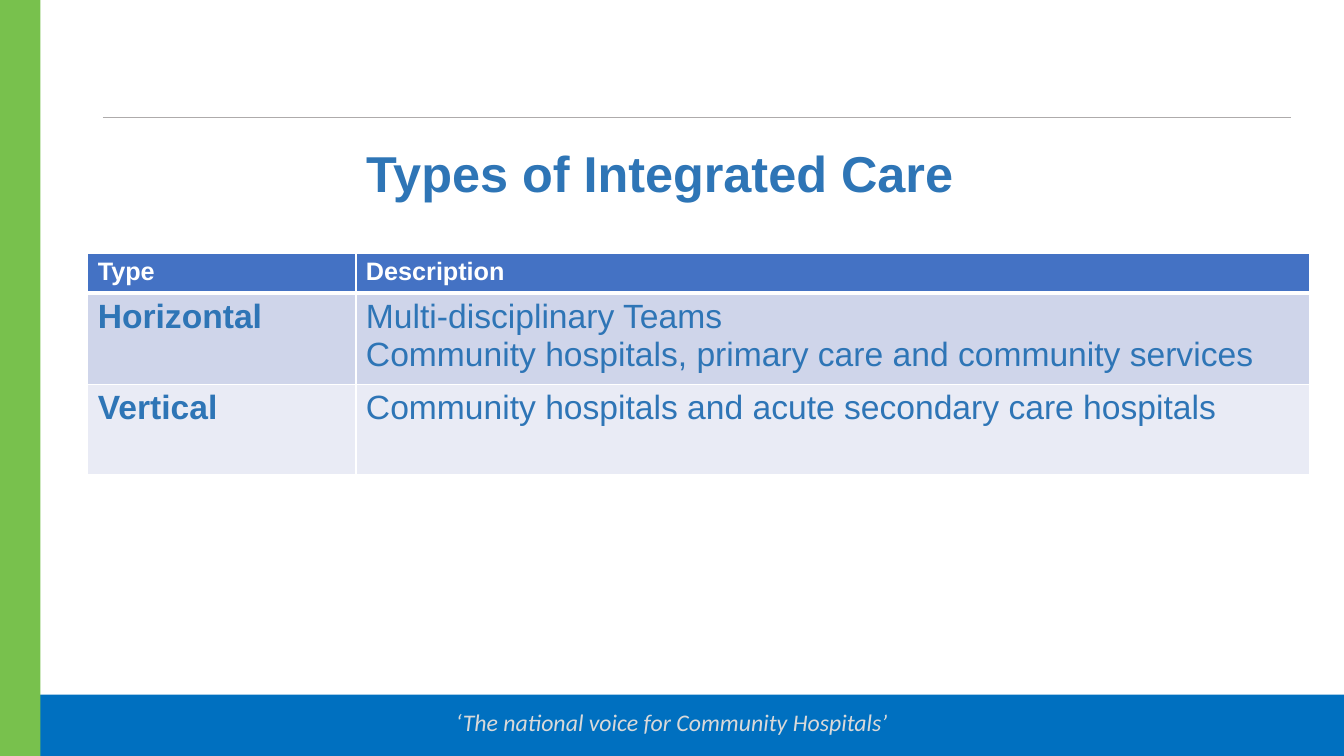
from lxml import etree
from pptx import Presentation
from pptx.dml.color import RGBColor
from pptx.enum import shapes, text
from pptx.oxml import ns
from pptx.util import Inches, Pt

BLUE_TEXT = "2E75B6"
WHITE = "FFFFFF"


def color(hex_value):
    return RGBColor.from_string(hex_value)


def write_text(frame, content, size, fill, font="Arial", bold=False, italic=False, align=None):
    """Fill a text frame with one paragraph per line of content."""
    frame.word_wrap = True
    for index, line in enumerate(content.split("\n")):
        paragraph = frame.add_paragraph() if index else frame.paragraphs[0]
        paragraph.alignment = align
        run = paragraph.add_run()
        run.text = line
        run.font.name = font
        run.font.size = Pt(size)
        run.font.bold = bold
        run.font.italic = italic
        run.font.color.rgb = color(fill)


presentation = Presentation()
presentation.slide_width = Inches(13.33)
presentation.slide_height = Inches(7.5)
slide = presentation.slides.add_slide(presentation.slide_layouts[6])

# Footer band, then the side band that overlaps its left end
bands = [(0.35, 6.89, 12.98, 0.61, "0070C0"), (0, 0, 0.4, 7.5, "78C14D")]
for left, top, width, height, fill in bands:
    band = slide.shapes.add_shape(
        shapes.MSO_SHAPE.RECTANGLE, Inches(left), Inches(top), Inches(width), Inches(height))
    band.shadow.inherit = False
    band.fill.solid()
    band.fill.fore_color.rgb = color(fill)
    band.line.fill.background()

motto = slide.shapes.add_textbox(Inches(0), Inches(6.98), Inches(13.33), Inches(0.5))
motto.text_frame.margin_top = motto.text_frame.margin_bottom = Inches(0.04)
write_text(motto.text_frame, "‘The national voice for Community Hospitals’", size=17,
           fill="D9D9D9", font="Calibri", italic=True, align=text.PP_ALIGN.CENTER)

rule = slide.shapes.add_connector(
    shapes.MSO_CONNECTOR.STRAIGHT, Inches(1.02), Inches(1.17), Inches(12.8), Inches(1.17))
rule.line.color.rgb = color("AEABAB")
rule.line.width = Pt(0.75)
etree.SubElement(rule._element.spPr, ns.qn("a:effectLst"))

title = slide.shapes.add_textbox(Inches(2.15), Inches(1.36), Inches(8.79), Inches(0.71))
write_text(title.text_frame, "Types of Integrated Care", size=36, fill=BLUE_TEXT,
           bold=True, align=text.PP_ALIGN.CENTER)

care_types = [
    ("Type", "Description"),
    ("Horizontal", "Multi-disciplinary Teams\nCommunity hospitals, primary care and community services"),
    ("Vertical", "Community hospitals and acute secondary care hospitals"),
]
row_fills = ["4472C4", "CFD5EA", "E9EBF5"]
row_heights = [0.4, 0.9, 0.9]
column_widths = [2.66, 9.46]

table = slide.shapes.add_table(
    len(care_types), len(column_widths), Inches(0.87), Inches(2.51),
    Inches(sum(column_widths)), Inches(sum(row_heights))).table
for column, width in zip(table.columns, column_widths):
    column.width = Inches(width)

for row_index, row in enumerate(table.rows):
    row.height = Inches(row_heights[row_index])
    is_header = row_index == 0
    for column_index, cell in enumerate(row.cells):
        write_text(cell.text_frame, care_types[row_index][column_index],
                   size=18 if is_header else 24,
                   fill=WHITE if is_header else BLUE_TEXT,
                   bold=is_header or column_index == 0)

        # Borders come before the fill in the cell properties
        properties = cell._tc.get_or_add_tcPr()
        for side in ("L", "R", "T", "B"):
            header_edge = (row_index, side) in [(0, "B"), (1, "T")]
            border = etree.SubElement(properties, ns.qn(f"a:ln{side}"),
                                      w=str(Pt(3 if header_edge else 1)))
            border_fill = etree.SubElement(border, ns.qn("a:solidFill"))
            etree.SubElement(border_fill, ns.qn("a:srgbClr"), val=WHITE)
        cell.fill.solid()
        cell.fill.fore_color.rgb = color(row_fills[row_index])

presentation.save("out.pptx")
